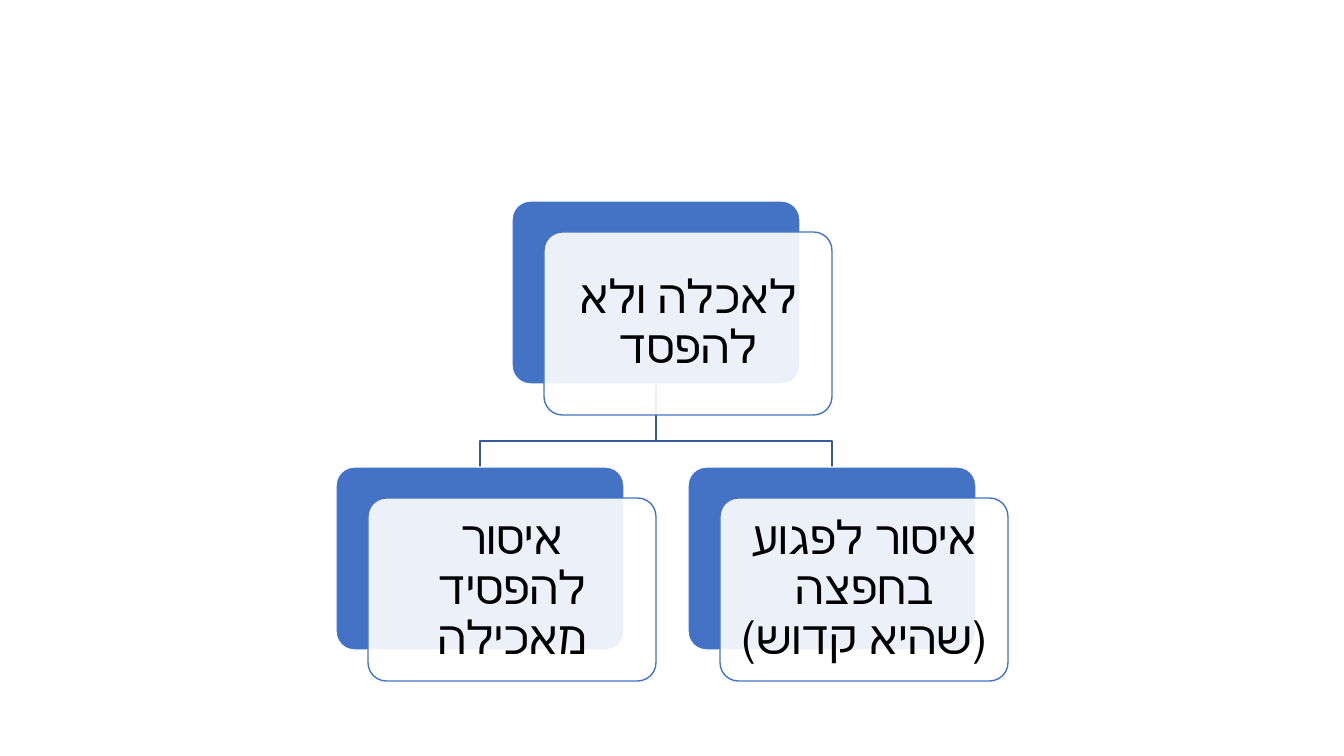
"""Build a slide with a three-card hierarchy in Hebrew."""
from lxml import etree
from pptx import Presentation
from pptx import util as u
from pptx.dml.color import RGBColor
from pptx.enum import lang, shapes, text
from pptx.oxml.ns import qn

ROOT = ("לאכלה ולא להפסד", 512, 201)
CHILDREN = [("איסור להפסיד מאכילה", 336, 467),
            ("איסור לפגוע בחפצה (שהיא קדוש)", 688, 467)]
SLIDE_W, SLIDE_H = 1344, 756
CARD_W, CARD_H = 288, 183
SHIFT_X, SHIFT_Y = 32, 31
BEND_Y, INSET = 441, 14
BLUE, LINK, WHITE, BLACK = "4472C4", "365B9D", "FFFFFF", "000000"
FONT = {"name": "Calibri", "size": u.Pt(33), "language_id": lang.MSO_LANGUAGE_ID.HEBREW}
SCALE = 914400 / 100.8


def px(n):
    return u.Emu(round(n * SCALE))


def rgb(color):
    return RGBColor.from_string(color)


def set_line(sp, color):
    sp.line.color.rgb = rgb(color)
    sp.line.width = u.Pt(1)


def add_link(s, x, y):
    start_x, start_y = ROOT[1] + CARD_W / 2, ROOT[2] + CARD_H
    end_x = x + CARD_W / 2
    fb = s.shapes.build_freeform(start_x, start_y, scale=SCALE)
    fb.add_line_segments([(start_x, BEND_Y), (end_x, BEND_Y), (end_x, y)], close=False)
    sp = fb.convert_to_shape()
    sp.shadow.inherit = False
    sp.fill.background()
    set_line(sp, LINK)


def add_box(s, x, y, fill, line):
    sp = s.shapes.add_shape(shapes.MSO_SHAPE.ROUNDED_RECTANGLE,
                            px(x), px(y), px(CARD_W), px(CARD_H))
    sp.adjustments[0] = 0.1
    sp.shadow.inherit = False
    sp.fill.solid()
    sp.fill.fore_color.rgb = rgb(fill)
    set_line(sp, line)
    return sp


def add_card(s, label, x, y):
    add_box(s, x, y, BLUE, WHITE)
    sp = add_box(s, x + SHIFT_X, y + SHIFT_Y, WHITE, BLUE)
    color = sp.fill._xPr.find(qn("a:solidFill")).find(qn("a:srgbClr"))
    etree.SubElement(color, qn("a:alpha"), val="90000")
    tf = sp.text_frame
    tf.word_wrap = True
    tf.vertical_anchor = text.MSO_ANCHOR.MIDDLE
    for side in ("left", "top", "right", "bottom"):
        setattr(tf, f"margin_{side}", px(INSET))
    p = tf.paragraphs[0]
    p.alignment = text.PP_ALIGN.CENTER
    p.line_spacing = 0.9
    p._p.get_or_add_pPr().set("rtl", "1")
    r = p.add_run()
    r.text = label
    for name, value in FONT.items():
        setattr(r.font, name, value)
    r.font.color.rgb = rgb(BLACK)
    rPr = r._r.get_or_add_rPr()
    rPr.set("kern", "1200")
    etree.SubElement(rPr, qn("a:cs"), typeface="+mn-cs")


def main():
    prs = Presentation()
    prs.slide_width, prs.slide_height = px(SLIDE_W), px(SLIDE_H)
    s = prs.slides.add_slide(prs.slide_layouts[6])
    for _, x, y in CHILDREN:
        add_link(s, x, y)
    for card in [ROOT, *CHILDREN]:
        add_card(s, *card)
    prs.save("out.pptx")


if __name__ == "__main__":
    main()
